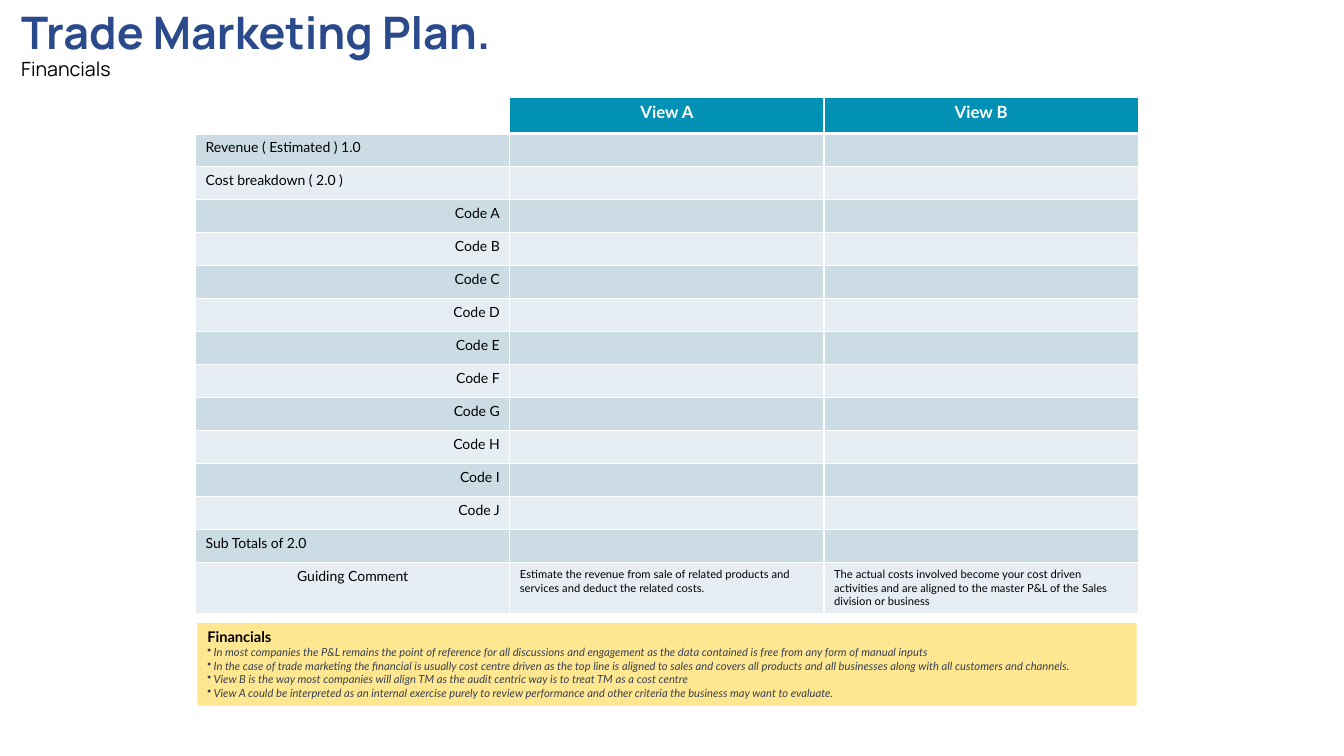
"""Build the trade marketing financials slide: a two-view cost table and a notes panel."""
import pptx
import pptx.util
import pptx.dml.color
import pptx.enum.shapes
import pptx.enum.text
import pptx.oxml
import pptx.oxml.ns

Pt = pptx.util.Pt
ALIGN = pptx.enum.text.PP_ALIGN

COLOURS = {
    "title": "2A4A8B", "black": "000000", "white": "FFFFFF", "header": "0091B5",
    "dark band": "CCDCE5", "light band": "E7EEF3", "panel": "FFE792", "note": "374151",
}
HEADING = "Trade Marketing Plan."
SUBHEADING = "Financials"
VIEWS = ["View A", "View B"]
ROWS = [
    ("Revenue ( Estimated ) 1.0", ALIGN.LEFT),
    ("Cost breakdown ( 2.0 )", ALIGN.LEFT),
    *[(f"Code {letter}", ALIGN.RIGHT) for letter in "ABCDEFGHIJ"],
    ("Sub Totals of 2.0", ALIGN.LEFT),
    ("Guiding Comment", ALIGN.CENTER),
]
COMMENTS = [
    "Estimate the revenue from sale of related products and services and deduct the related costs.",
    "The actual costs involved become your cost driven activities and are aligned to the master "
    "P&L of the Sales division or business",
]
NOTES_HEADING = "Financials"
NOTES = [
    "In most companies the P&L remains the point of reference for all discussions and engagement "
    "as the data contained is free from any form of manual inputs",
    "In the case of trade marketing the financial is usually cost centre driven as the top line is "
    "aligned to sales and covers all products and all businesses along with all customers and channels.",
    "View B is the way most companies will align TM as the audit centric way is to treat TM as a cost centre",
    "View A could be interpreted as an internal exercise purely to review performance and other "
    "criteria the business may want to evaluate.",
]
TABLE_LEFT, TABLE_TOP, COLUMN_WIDTH = 139.7, 69.4, 224.5
HEADER_HEIGHT, ROW_HEIGHT, COMMENT_HEIGHT = 26, 23.6, 36


def colour(name):
    return pptx.dml.color.RGBColor.from_string(COLOURS[name])


def style(paragraph, size, ink, face="Lato", bold=False, italic=False):
    font = paragraph.font
    font.name, font.size, font.bold, font.italic = face, Pt(size), bold, italic
    font.color.rgb = colour(ink)


def add_border(cell, side, width):
    cell._tc.get_or_add_tcPr().append(pptx.oxml.parse_xml(
        f'<a:{side} {pptx.oxml.ns.nsdecls("a")} w="{Pt(width)}"><a:solidFill>'
        f'<a:srgbClr val="{COLOURS["white"]}"/></a:solidFill></a:{side}>'))


def fill_cell(cell, text, band, size, ink, align, bold, bottom):
    for side, width in (("lnL", 1), ("lnR", 1), ("lnT", 1), ("lnB", bottom)):
        add_border(cell, side, width)
    cell.fill.solid()
    cell.fill.fore_color.rgb = colour(band)
    paragraph = cell.text_frame.paragraphs[0]
    paragraph.alignment = align
    style(paragraph, size, ink, bold=bold)
    if text:
        paragraph.add_run().text = text
    else:
        paragraph._p.append(pptx.oxml.parse_xml(
            f'<a:endParaRPr {pptx.oxml.ns.nsdecls("a")} sz="{size * 100}"/>'))


def add_heading(slide):
    title = slide.shapes.title
    title.left, title.top, title.width, title.height = Pt(7.9), Pt(4.3), Pt(504.7), Pt(63.4)
    frame = title.text_frame
    frame.text = f"{HEADING}\n{SUBHEADING}"
    frame.vertical_anchor = pptx.enum.text.MSO_ANCHOR.TOP
    frame.auto_size = pptx.enum.text.MSO_AUTO_SIZE.NONE
    looks = [(32, "title", True), (14, "black", False)]
    for paragraph, (size, ink, bold) in zip(frame.paragraphs, looks):
        paragraph.alignment = ALIGN.LEFT
        paragraph.line_spacing = 0.9
        style(paragraph, size, ink, "Manrope", bold)


def add_financials(slide):
    heights = [HEADER_HEIGHT] + [ROW_HEIGHT] * (len(ROWS) - 1) + [COMMENT_HEIGHT]
    table = slide.shapes.add_table(
        len(heights), len(VIEWS) + 1, Pt(TABLE_LEFT), Pt(TABLE_TOP),
        Pt(COLUMN_WIDTH * (len(VIEWS) + 1)), Pt(sum(heights))).table
    for column in table.columns:
        column.width = Pt(COLUMN_WIDTH)
    for row, height in zip(table.rows, heights):
        row.height = Pt(height)
    for c, view in enumerate([""] + VIEWS):
        fill_cell(table.cell(0, c), view, "header" if view else "white",
                  12, "white", ALIGN.CENTER, True, 3)
    for r, (label, align) in enumerate(ROWS, start=1):
        band = "dark band" if r % 2 else "light band"
        fill_cell(table.cell(r, 0), label, band, 10, "black", align, False, 1)
        values = COMMENTS if r == len(ROWS) else [""] * len(VIEWS)
        for c, value in enumerate(values, start=1):
            fill_cell(table.cell(r, c), value, band, 8, "black", ALIGN.LEFT, False, 1)


def add_notes_panel(slide):
    panel = slide.shapes.add_shape(
        pptx.enum.shapes.MSO_SHAPE.RECTANGLE, Pt(141), Pt(445), Pt(671), Pt(59))
    panel.shadow.inherit = False
    panel.fill.solid()
    panel.fill.fore_color.rgb = colour("panel")
    panel.line.fill.background()
    frame = panel.text_frame
    frame.text = "\n".join([NOTES_HEADING] + NOTES)
    frame.word_wrap = True
    frame.vertical_anchor = pptx.enum.text.MSO_ANCHOR.TOP
    heading, *notes = frame.paragraphs
    heading.alignment = ALIGN.LEFT
    style(heading, 10.5, "black", bold=True)
    for note in notes:
        note.alignment = ALIGN.LEFT
        properties = note._p.get_or_add_pPr()
        properties.set("marL", str(Pt(4.5)))
        properties.set("indent", str(-Pt(4.5)))
        properties.append(pptx.oxml.parse_xml(
            f'<a:buChar {pptx.oxml.ns.nsdecls("a")} char="•"/>'))
        style(note, 8, "note", italic=True)


def main():
    deck = pptx.Presentation()
    deck.slide_width, deck.slide_height = Pt(960), Pt(540)
    slide = deck.slides.add_slide(deck.slide_layouts[5])
    add_heading(slide)
    add_financials(slide)
    add_notes_panel(slide)
    deck.save("out.pptx")


if __name__ == "__main__":
    main()
